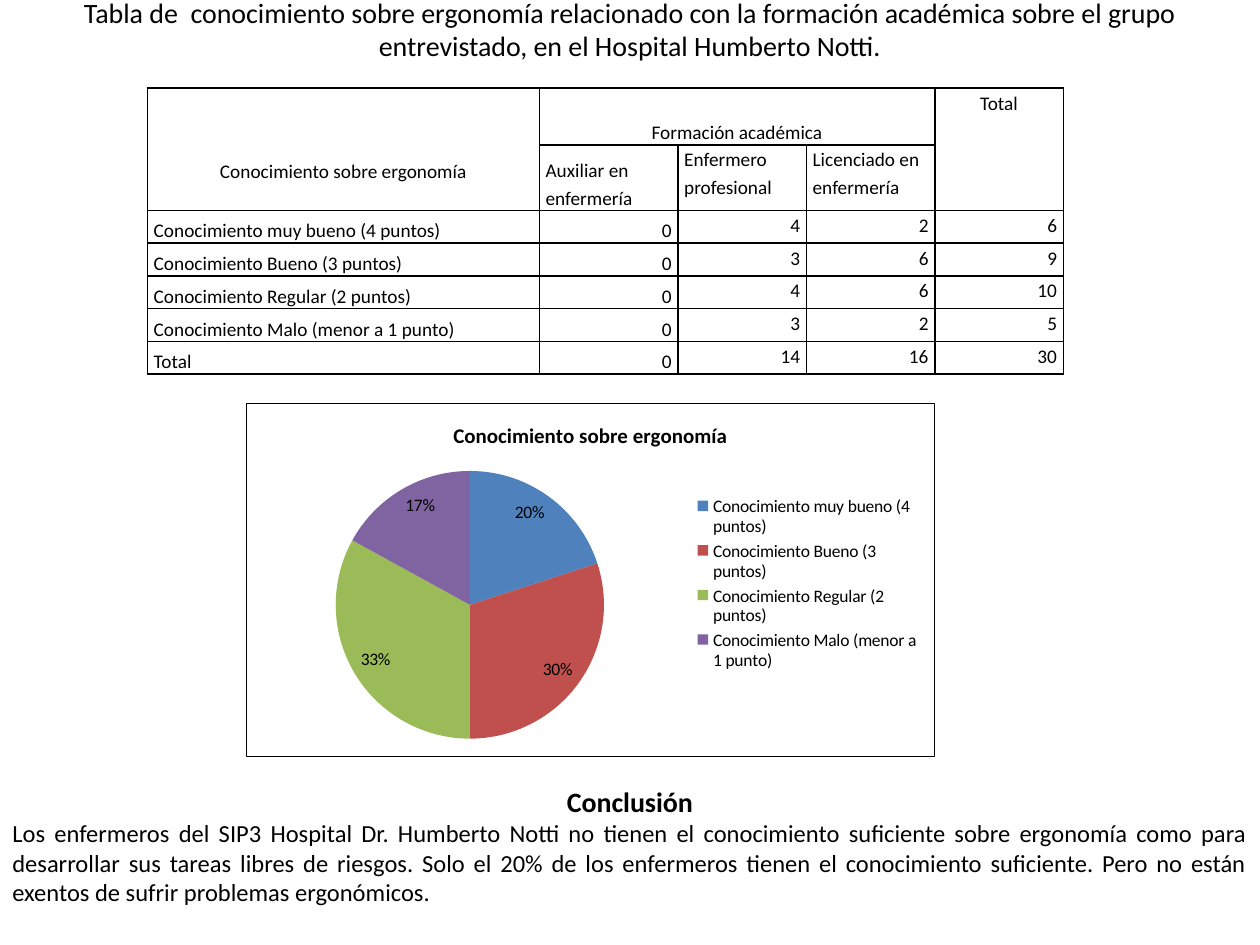
from typing import NamedTuple

from lxml import etree
from pptx import Presentation
from pptx.chart.data import CategoryChartData
from pptx.dml.color import RGBColor
from pptx.enum.chart import XL_CHART_TYPE, XL_LABEL_POSITION, XL_LEGEND_POSITION
from pptx.enum.text import MSO_ANCHOR, PP_ALIGN
from pptx.oxml import parse_xml
from pptx.oxml.ns import nsdecls, qn
from pptx.util import Inches, Pt

LEFT, CENTER, RIGHT, JUSTIFY = PP_ALIGN.LEFT, PP_ALIGN.CENTER, PP_ALIGN.RIGHT, PP_ALIGN.JUSTIFY
TOP, MIDDLE, BOTTOM = MSO_ANCHOR.TOP, MSO_ANCHOR.MIDDLE, MSO_ANCHOR.BOTTOM
FACE, BLACK = "Calibri", "000000"
TOPIC = "Conocimiento sobre ergonomía"


class Para(NamedTuple):
    text: str
    size: float
    align: int
    bold: bool = False
    spacing: float = 1.0


class Level(NamedTuple):
    name: str
    counts: tuple[int, ...]
    share: int
    color: str


LEVELS = [
    Level("Conocimiento muy bueno (4 puntos)", (0, 4, 2, 6), 20, "4F81BD"),
    Level("Conocimiento Bueno (3 puntos)", (0, 3, 6, 9), 30, "C0504D"),
    Level("Conocimiento Regular (2 puntos)", (0, 4, 6, 10), 33, "9BBB59"),
    Level("Conocimiento Malo (menor a 1 punto)", (0, 3, 2, 5), 17, "8064A2"),
]
TOTALS = (0, 14, 16, 30)
COLS = [3.11, 1.1, 1.02, 1.02, 1.02]
ROWS = [0.45, 0.52] + [0.26] * 5


def paint(hue: str) -> RGBColor:
    return RGBColor.from_string(hue)


def style(font, size: float, bold: bool = False) -> None:
    font.name, font.size, font.bold = FACE, Pt(size), bold
    font.color.rgb = paint(BLACK)


def write(frame, paras: list[Para]) -> None:
    for i, item in enumerate(paras):
        para = frame.add_paragraph() if i else frame.paragraphs[0]
        para.alignment, para.line_spacing = item.align, item.spacing
        run = para.add_run()
        run.text = item.text
        style(run.font, item.size, item.bold)


def add_text(slide, top: float, height: float, paras: list[Para], foot: float = 0.05) -> None:
    box = slide.shapes.add_textbox(0, Inches(top), Inches(10), Inches(height))
    frame = box.text_frame
    frame.word_wrap, frame.vertical_anchor = True, MIDDLE
    frame.margin_bottom = Inches(foot)
    write(frame, paras)


def edge(cell) -> None:
    """Draw a thin black border on all four sides of a cell."""
    props = cell._tc.get_or_add_tcPr()
    for i, side in enumerate(("lnL", "lnR", "lnT", "lnB")):
        props.insert(i, parse_xml(
            f'<a:{side} {nsdecls("a")} w="12700"><a:solidFill>'
            f'<a:srgbClr val="{BLACK}"/></a:solidFill></a:{side}>'))


def fill_cell(cell, text: str, align: int, anchor: int, foot: float = 0) -> None:
    cell.vertical_anchor = anchor
    cell.margin_top, cell.margin_bottom = 0, Inches(foot)
    write(cell.text_frame, [Para(text, 11, align, spacing=1.15)])


def add_grid(slide) -> None:
    frame = slide.shapes.add_table(len(ROWS), len(COLS), Inches(1.17), Inches(0.7),
                                   Inches(sum(COLS)), Inches(sum(ROWS)))
    table = frame.table
    table.first_row = table.horz_banding = False
    for col, width in zip(table.columns, COLS):
        col.width = Inches(width)
    for row, height in zip(table.rows, ROWS):
        row.height = Inches(height)
    for cell in table.iter_cells():
        cell.margin_left = cell.margin_right = Inches(0.05)
        cell.fill.background()
        edge(cell)

    for start, end in (((0, 0), (1, 0)), ((0, 1), (0, 3)), ((0, 4), (1, 4))):
        table.cell(*start).merge(table.cell(*end))
    fill_cell(table.cell(0, 0), TOPIC, CENTER, BOTTOM, 0.21)
    fill_cell(table.cell(0, 1), "Formación académica", CENTER, BOTTOM)
    fill_cell(table.cell(0, 4), "Total", CENTER, TOP)
    heads = ("Auxiliar en enfermería", "Enfermero profesional", "Licenciado en enfermería")
    for c, head in enumerate(heads, 1):
        fill_cell(table.cell(1, c), head, LEFT, BOTTOM if c == 1 else TOP)

    body = [(level.name, level.counts) for level in LEVELS] + [("Total", TOTALS)]
    for r, (name, counts) in enumerate(body, 2):
        fill_cell(table.cell(r, 0), name, LEFT, BOTTOM)
        for c, count in enumerate(counts, 1):
            fill_cell(table.cell(r, c), str(count), RIGHT, BOTTOM if c == 1 else TOP)


def place(part, after: str | None, inner: bool, **box: float) -> None:
    """Give a chart part a fixed place, in fractions of the chart."""
    for old in part.findall(qn("c:layout")):
        part.remove(old)
    layout = etree.Element(qn("c:layout"))
    manual = etree.SubElement(layout, qn("c:manualLayout"))
    modes = {"layoutTarget": "inner"} if inner else {}
    modes |= {"xMode": "edge", "yMode": "edge"}
    for tag, val in (modes | box).items():
        etree.SubElement(manual, qn(f"c:{tag}")).set("val", str(val))
    if after:
        part.find(qn(after)).addnext(layout)
    else:
        part.insert(0, layout)


def add_pie(slide) -> None:
    data = CategoryChartData()
    data.categories = [level.name for level in LEVELS]
    data.add_series("Series 1", [level.share for level in LEVELS])
    chart = slide.shapes.add_chart(XL_CHART_TYPE.PIE, Inches(1.95), Inches(3.2),
                                   Inches(5.47), Inches(2.81), data).chart
    style(chart.font, 10)
    write(chart.chart_title.text_frame, [Para(TOPIC, 12, CENTER, True)])
    chart.has_legend = True
    chart.legend.position = XL_LEGEND_POSITION.RIGHT
    chart.legend.include_in_layout = False

    plot = chart.plots[0]
    plot.vary_by_categories = True
    for i, level in enumerate(LEVELS):
        fill = plot.series[0].points[i].format.fill
        fill.solid()
        fill.fore_color.rgb = paint(level.color)
    plot.has_data_labels = True
    labels = plot.data_labels
    labels.show_percentage, labels.show_value = True, False
    labels.number_format, labels.number_format_is_linked = "0%", False
    labels.position = XL_LABEL_POSITION.INSIDE_END
    style(labels.font, 10)

    root = chart._chartSpace
    place(root.find(".//" + qn("c:plotArea")), None, True, x=0.13, y=0.19, w=0.39, h=0.76)
    place(root.find(".//" + qn("c:legend")), "c:legendPos", False, x=0.65, y=0.25, w=0.33, h=0.52)
    root.find(qn("c:chart")).addnext(parse_xml(
        f'<c:spPr {nsdecls("c", "a")}><a:noFill/><a:ln w="9525"><a:solidFill>'
        f'<a:srgbClr val="{BLACK}"/></a:solidFill></a:ln></c:spPr>'))


def main() -> None:
    deck = Presentation()
    deck.slide_width, deck.slide_height = Inches(10), Inches(7.5)
    slide = deck.slides.add_slide(deck.slide_layouts[6])
    add_text(slide, 0, 0.7, [Para(
        "Tabla de  conocimiento sobre ergonomía relacionado con la formación académica "
        "sobre el grupo entrevistado, en el Hospital Humberto Notti.", 16, CENTER)], 0.29)
    add_grid(slide)
    add_pie(slide)
    add_text(slide, 6.17, 1.08, [
        Para("Conclusión", 16, CENTER, True),
        Para("Los enfermeros del SIP3 Hospital Dr. Humberto Notti no tienen el conocimiento "
             "suficiente sobre ergonomía como para desarrollar sus tareas libres de riesgos. "
             "Solo el 20% de los enfermeros tienen el conocimiento suficiente. Pero no están "
             "exentos de sufrir problemas ergonómicos.", 14, JUSTIFY)])
    deck.save("out.pptx")


if __name__ == "__main__":
    main()
